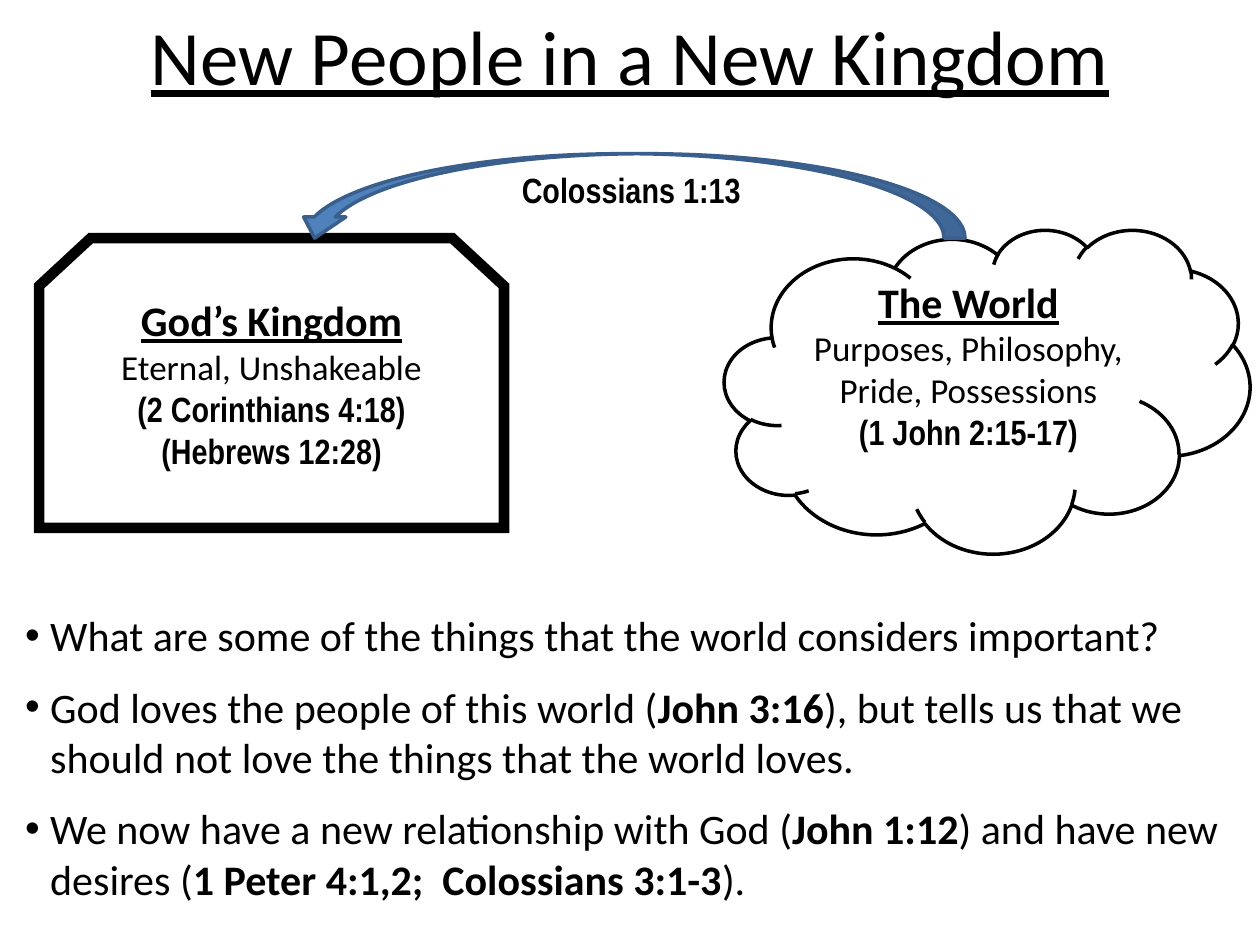
from dataclasses import dataclass

from lxml import etree
from pptx import Presentation
from pptx.dml.color import RGBColor
from pptx.enum.shapes import MSO_SHAPE
from pptx.enum.text import MSO_ANCHOR, MSO_AUTO_SIZE, PP_ALIGN
from pptx.oxml.ns import qn
from pptx.util import Inches, Pt

CLOUD, CURVED_ARROW = MSO_SHAPE.CLOUD, MSO_SHAPE.CURVED_DOWN_ARROW
CENTER, LEFT = PP_ALIGN.CENTER, PP_ALIGN.LEFT
MIDDLE, TOP = MSO_ANCHOR.MIDDLE, MSO_ANCHOR.TOP
GROW = MSO_AUTO_SIZE.SHAPE_TO_FIT_TEXT


@dataclass(frozen=True)
class Theme:
    """Colours, fonts and type sizes of the slide."""

    ink: RGBColor = RGBColor(0x00, 0x00, 0x00)
    arrow_fill: RGBColor = RGBColor(0x4F, 0x81, 0xBD)
    arrow_line: RGBColor = RGBColor(0x3A, 0x5F, 0x8C)
    body_font: str = "Calibri"
    verse_font: str = "Arial Narrow"
    title: Pt = Pt(44)
    large: Pt = Pt(24)
    small: Pt = Pt(20)


THEME = Theme()
TITLE = {"name": THEME.body_font, "size": THEME.title, "bold": False, "underline": True}
HEADING = {"name": THEME.body_font, "size": THEME.large, "bold": True, "underline": True}
DETAIL = {"name": THEME.body_font, "size": THEME.small, "bold": False, "underline": False}
VERSE = {"name": THEME.verse_font, "size": THEME.small, "bold": True, "underline": False}
BULLET = {"name": THEME.body_font, "size": THEME.large, "bold": False}

KINGDOM_TEXT = [
    [("God’s Kingdom", HEADING)],
    [("Eternal, Unshakeable", DETAIL)],
    [("(2 Corinthians 4:18)", VERSE)],
    [("(Hebrews 12:28)", VERSE)],
]
WORLD_TEXT = [
    [("The World", HEADING)],
    [("Purposes, Philosophy, Pride, Possessions", DETAIL)],
    [("(1 John 2:15-17)", VERSE)],
]
QUESTIONS = [
    "What are some of the things that the world considers important?",
    "God loves the people of this world (*John 3:16*), but tells us that we "
    "should not love the things that the world loves.",
    "We now have a new relationship with God (*John 1:12*) and have new "
    "desires (*1 Peter 4:1,2;  Colossians 3:1-3*).",
]


def inches(*values):
    """Turn numbers into lengths."""
    return [Inches(value) for value in values]


def write_text(shape, paragraphs, alignment=CENTER, anchor=MIDDLE):
    """Fill a shape with paragraphs made of (text, format) runs."""
    frame = shape.text_frame
    frame.word_wrap = True
    frame.vertical_anchor = anchor
    for index, runs in enumerate(paragraphs):
        paragraph = frame.add_paragraph() if index else frame.paragraphs[0]
        paragraph.alignment = alignment
        for text, text_format in runs:
            run = paragraph.add_run()
            run.text = text
            run.font.color.rgb = THEME.ink
            for name, value in text_format.items():
                setattr(run.font, name, value)


def style_shape(shape, line_color, line_width, fill_color=None):
    """Set fill and outline and remove the shadow."""
    shape.shadow.inherit = False
    if fill_color is None:
        shape.fill.background()
    else:
        shape.fill.solid()
        shape.fill.fore_color.rgb = fill_color
    shape.line.color.rgb = line_color
    shape.line.width = Pt(line_width)


def add_title(slide, text):
    """Place and fill the title placeholder."""
    title = slide.shapes.title
    title.left, title.top, title.width, title.height = inches(0.5, -0.08, 9, 1.03)
    write_text(title, [[(text, TITLE)]])


def add_world(slide):
    """Draw the cloud that stands for the world."""
    cloud = slide.shapes.add_shape(CLOUD, *inches(5.75, 1.82, 4.17, 2.57))
    style_shape(cloud, THEME.ink, 2)
    write_text(cloud, WORLD_TEXT)
    cloud.text_frame.margin_bottom = Inches(0.35)


def add_kingdom(slide):
    """Draw the box with two cut corners that stands for the kingdom."""
    left, top, right, bottom = inches(0.31, 1.89, 4, 4.19)
    cut_x, cut_y = inches(0.41, 0.38)
    builder = slide.shapes.build_freeform(left + cut_x, top)
    builder.add_line_segments([
        (right - cut_x, top), (right, top + cut_y), (right, bottom),
        (left, bottom), (left, top + cut_y),
    ])
    box = builder.convert_to_shape()
    style_shape(box, THEME.ink, 6)
    etree.SubElement(box.line._get_or_add_ln(), qn("a:miter"), lim="800000")
    write_text(box, KINGDOM_TEXT)


def add_transfer(slide):
    """Group the curved arrow with its verse label."""
    group = slide.shapes.add_group_shape()
    label = group.shapes.add_textbox(*inches(3.84, 1.29, 2.34, 0.47))
    write_text(label, [[("Colossians 1:13", VERSE)]], anchor=TOP)
    arrow = group.shapes.add_shape(CURVED_ARROW, *inches(2.33, 1.22, 5.33, 0.67))
    style_shape(arrow, THEME.arrow_line, 2, THEME.arrow_fill)
    arrow._element.spPr.xfrm.set("flipH", "1")


def add_questions(slide):
    """Add the bulleted text, with starred parts in bold."""
    box = slide.shapes.add_textbox(*inches(0.1, 4.79, 9.82, 2.46))
    bold = {**BULLET, "bold": True}
    paragraphs = [
        [(part, bold if index % 2 else BULLET) for index, part in enumerate(text.split("*"))]
        for text in QUESTIONS
    ]
    write_text(box, paragraphs, LEFT, TOP)
    box.text_frame.auto_size = GROW
    for paragraph in box.text_frame.paragraphs:
        paragraph.space_after = Pt(12)
        properties = paragraph._p.get_or_add_pPr()
        properties.set("marL", str(Inches(0.2)))
        properties.set("indent", str(-Inches(0.2)))
        etree.SubElement(properties, qn("a:buFont"), typeface="Arial")
        etree.SubElement(properties, qn("a:buChar"), char="•")


def main():
    """Build and save the slide."""
    presentation = Presentation()
    presentation.slide_width, presentation.slide_height = inches(10, 7.5)
    slide = presentation.slides.add_slide(presentation.slide_layouts.get_by_name("Title Only"))
    add_world(slide)
    add_title(slide, "New People in a New Kingdom")
    add_kingdom(slide)
    add_questions(slide)
    add_transfer(slide)
    presentation.save("out.pptx")


if __name__ == "__main__":
    main()
